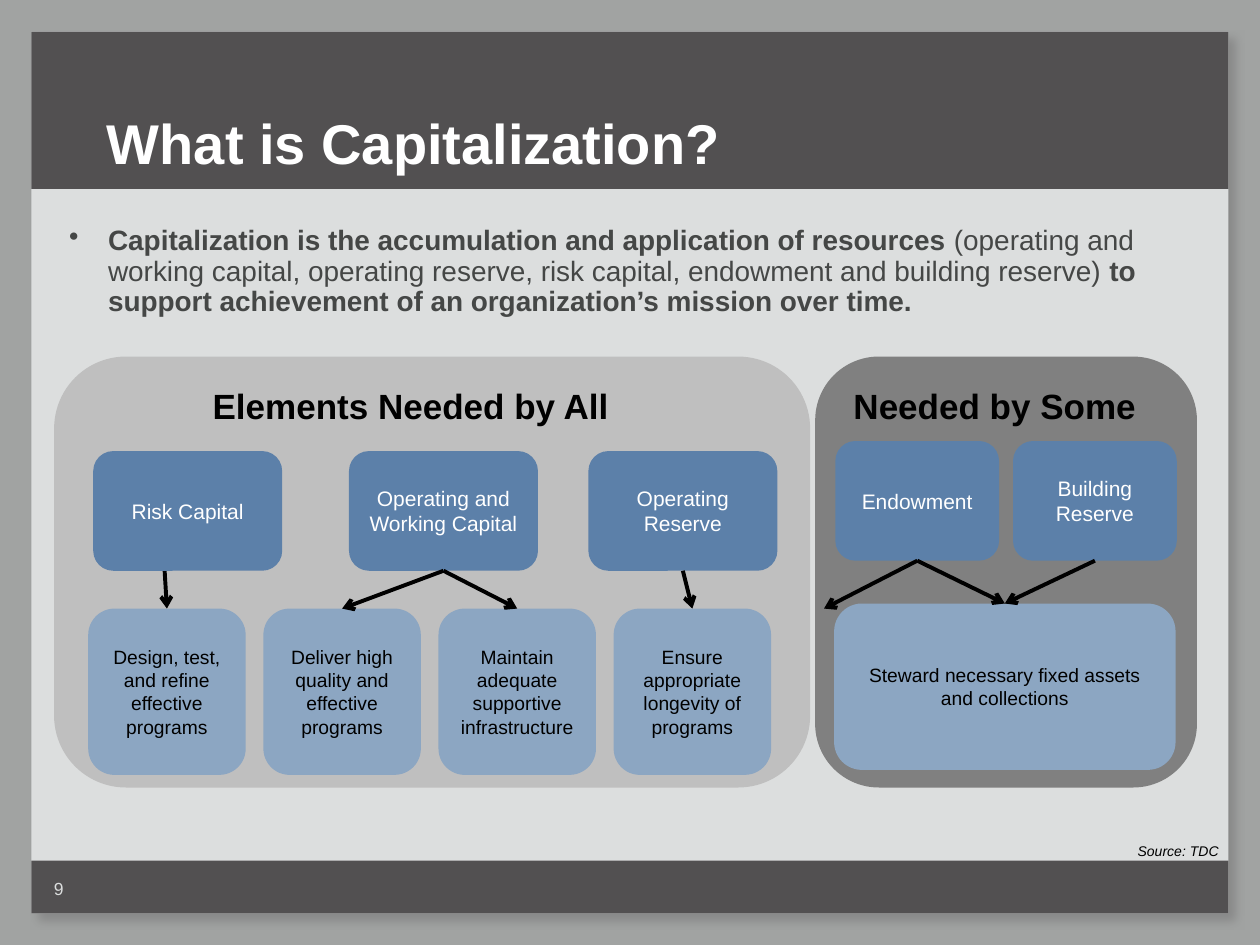
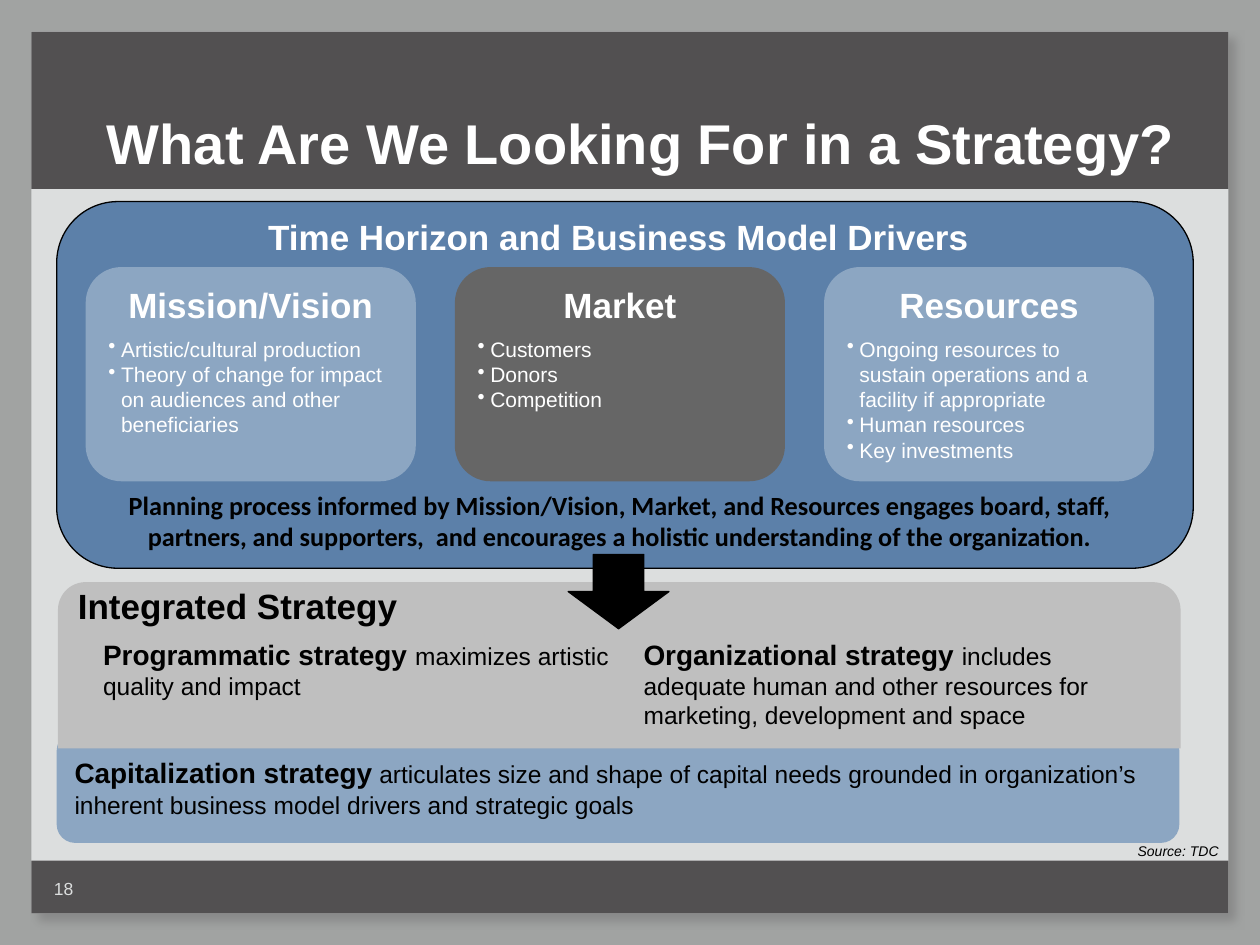
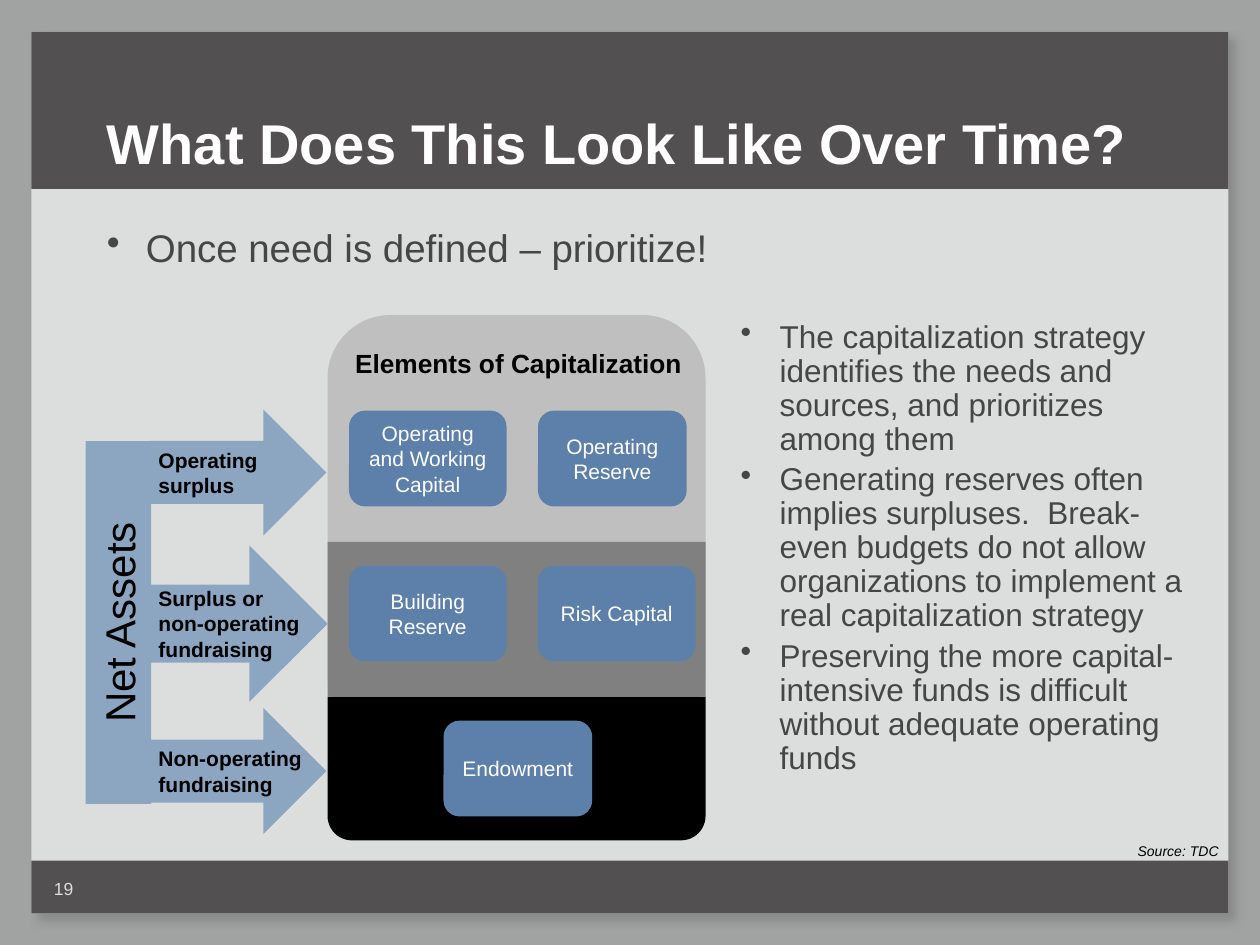
from lxml.etree import SubElement
from pptx import Presentation
from pptx.dml.color import RGBColor
from pptx.enum.shapes import MSO_CONNECTOR, MSO_SHAPE
from pptx.enum.text import MSO_ANCHOR, PP_ALIGN
from pptx.oxml.ns import qn
from pptx.util import Inches, Pt

BACKDROP = RGBColor(0xA1, 0xA3, 0xA2)
PAGE = RGBColor(0xDC, 0xDE, 0xDE)
BAND = RGBColor(0x52, 0x50, 0x51)
BODY = RGBColor(0x45, 0x47, 0x46)
DARK_BLUE = RGBColor(0x5C, 0x80, 0xA9)
LIGHT_BLUE = RGBColor(0x8C, 0xA6, 0xC2)
LIGHT_GRAY = RGBColor(0xBF, 0xBF, 0xBF)
MID_GRAY = RGBColor(0x80, 0x80, 0x80)
DARK_GRAY = RGBColor(0x66, 0x66, 0x66)
BLACK = RGBColor(0, 0, 0)
WHITE = RGBColor(0xFF, 0xFF, 0xFF)

BULLETS = {"color": BODY, "bullet_indent": 0.31, "line_spacing": 0.9}
BOLD = {"bold": True}
LEAD = {"bold": True, "size": 16}


def format_run(run, size, color, bold, italic, font):
    """Set the font of one run."""
    run.font.size = Pt(size)
    run.font.color.rgb = color
    run.font.bold = bold
    run.font.italic = italic
    run.font.name = font


def add_bullet(paragraph, indent):
    """Give a paragraph a hanging bullet."""
    properties = paragraph._p.get_or_add_pPr()
    properties.set("marL", str(Inches(indent)))
    properties.set("indent", str(-Inches(indent)))
    SubElement(properties, qn("a:buChar"), char="•")


def write(shape, *paragraphs, size=12, color=BLACK, bold=False, italic=False,
          font="Arial", align=PP_ALIGN.LEFT, anchor=MSO_ANCHOR.TOP, wrap=True,
          bullet_indent=None, line_spacing=None, before=0, after=0):
    """Append paragraphs, each a string or a list of (text, overrides) runs."""
    frame = shape.text_frame
    frame.word_wrap = wrap
    frame.vertical_anchor = anchor
    for content in paragraphs:
        first = not frame.paragraphs[0].runs
        paragraph = frame.paragraphs[0] if first else frame.add_paragraph()
        paragraph.alignment = align
        paragraph.space_before = Pt(0 if first else before)
        paragraph.space_after = Pt(after)
        if line_spacing:
            paragraph.line_spacing = line_spacing
        if bullet_indent:
            add_bullet(paragraph, bullet_indent)
        runs = [(content, {})] if isinstance(content, str) else content
        for text, overrides in runs:
            run = paragraph.add_run()
            run.text = text
            style = {"size": size, "color": color, "bold": bold,
                     "italic": italic, "font": font}
            format_run(run, **{**style, **overrides})


def add_text(slide, box, *paragraphs, **style):
    """Add a text box; box is left, top, width and height in inches."""
    shape = slide.shapes.add_textbox(*map(Inches, box))
    write(shape, *paragraphs, **style)
    return shape


def add_panel(slide, box, fill, kind=MSO_SHAPE.ROUNDED_RECTANGLE, outline=None, rotation=0):
    """Add a filled shape, outlined only when a colour is given."""
    shape = slide.shapes.add_shape(kind, *map(Inches, box))
    shape.shadow.inherit = False
    shape.fill.solid()
    shape.fill.fore_color.rgb = fill
    shape.rotation = rotation
    if outline is None:
        shape.line.fill.background()
    else:
        shape.line.color.rgb = outline
        shape.line.width = Pt(0.75)
    return shape


def add_label_box(slide, box, text, fill=DARK_BLUE, color=WHITE, size=12):
    """Add a rounded box with a centred label."""
    shape = add_panel(slide, box, fill)
    write(shape, text, size=size, color=color, align=PP_ALIGN.CENTER,
          anchor=MSO_ANCHOR.MIDDLE)
    return shape


def add_purpose_box(slide, box, text):
    """Add a pale box that states what capital is for."""
    return add_label_box(slide, box, text, LIGHT_BLUE, BLACK, 11)


def add_arrow(slide, start, end):
    """Draw an arrow; each end is a point, or a box joined at bottom or top."""
    start_point = start if isinstance(start, tuple) else (0, 0)
    end_point = end if isinstance(end, tuple) else (0, 0)
    connector = slide.shapes.add_connector(
        MSO_CONNECTOR.STRAIGHT, *map(Inches, start_point + end_point))
    if not isinstance(start, tuple):
        connector.begin_connect(start, 2)
    if not isinstance(end, tuple):
        connector.end_connect(end, 0)
    connector.line.color.rgb = BLACK
    connector.line.width = Pt(2.25)
    SubElement(connector.line._get_or_add_ln(), qn("a:tailEnd"), type="arrow")
    SubElement(connector._element.spPr, qn("a:effectLst"))


def add_drop_shadow(shape):
    """Give a shape a soft gray shadow to the lower right."""
    effects = shape._element.spPr.find(qn("a:effectLst"))
    shadow = SubElement(effects, qn("a:outerShdw"), blurRad=str(Pt(5)),
                        dist=str(Pt(6)), dir="2700000", algn="tl", rotWithShape="0")
    color = SubElement(shadow, qn("a:srgbClr"), val=str(MID_GRAY))
    SubElement(color, qn("a:alpha"), val="75000")


def add_base_slide(presentation, title, number):
    """Add a slide with the shared frame, title, number and source."""
    slide = presentation.slides.add_slide(presentation.slide_layouts[6])
    slide.background.fill.solid()
    slide.background.fill.fore_color.rgb = BACKDROP
    page = add_panel(slide, (0.25, 0.25, 9.5, 7), PAGE, MSO_SHAPE.RECTANGLE)
    add_drop_shadow(page)
    for top, height in ((6.83, 0.42), (0.25, 1.25)):
        add_panel(slide, (0.25, top, 9.5, height), BAND, MSO_SHAPE.RECTANGLE)
    add_text(slide, (0.75, 0.5, 8.92, 1.25), title, size=32, color=WHITE,
             bold=True, anchor=MSO_ANCHOR.MIDDLE)
    add_text(slide, (0.33, 6.92, 0.39, 0.3), str(number), size=10, color=PAGE)
    add_text(slide, (8.93, 6.64, 0.85, 0.24), "Source: TDC", size=8,
             italic=True, wrap=False)
    return slide


def build_definition(presentation):
    """Build the slide that defines capitalization."""
    slide = add_base_slide(presentation, "What is Capitalization?", 9)
    add_text(slide, (0.45, 1.75, 8.93, 0.9), [
        ("Capitalization is the accumulation and application of resources ", BOLD),
        ("(operating and working capital, operating reserve, risk capital, "
         "endowment and building reserve) ", {}),
        ("to support achievement of an organization’s mission over time.", BOLD),
    ], size=16, **BULLETS)

    heading = {"size": 20, "bold": True, "align": PP_ALIGN.CENTER}
    add_panel(slide, (0.43, 2.83, 6, 3.42), LIGHT_GRAY)
    add_text(slide, (0.62, 3, 5.28, 0.44), "Elements Needed by All", **heading)
    purposes = ("Design, test, and refine effective programs",
                "Deliver high quality and effective programs",
                "Maintain adequate supportive infrastructure",
                "Ensure appropriate longevity of programs")
    design, deliver, maintain, ensure = [
        add_purpose_box(slide, (0.7 + 1.39 * index, 4.83, 1.25, 1.32), text)
        for index, text in enumerate(purposes)]
    add_arrow(slide, (1.29, 4.25), design)
    elements = ((0.74, "Risk Capital"), (2.77, "Operating and Working Capital"),
                (4.67, "Operating Reserve"))
    _, working_capital, operating_reserve = [
        add_label_box(slide, (left, 3.58, 1.5, 0.95), text) for left, text in elements]

    add_panel(slide, (6.47, 2.83, 3.03, 3.42), MID_GRAY)
    add_text(slide, (6.29, 3, 3.21, 0.44), "Needed by Some", **heading)
    steward = add_purpose_box(slide, (6.62, 4.79, 2.71, 1.32),
                              "Steward necessary fixed assets and collections")
    endowment, building_reserve = [
        add_label_box(slide, (left, 3.5, 1.3, 0.95), text)
        for left, text in ((6.63, "Endowment"), (8.04, "Building Reserve"))]

    for start, end in ((working_capital, deliver), (working_capital, maintain),
                       (operating_reserve, ensure), (endowment, steward),
                       (endowment, (6.54, 4.83)), (building_reserve, steward)):
        add_arrow(slide, start, end)


def build_strategy(presentation):
    """Build the slide on what a strategy holds."""
    slide = add_base_slide(presentation, "What Are We Looking For in a Strategy?", 18)
    add_panel(slide, (0.45, 1.6, 9.02, 2.91), DARK_BLUE, outline=BLACK)
    add_text(slide, (2.03, 1.66, 6.37, 0.44), "Time Horizon and Business Model Drivers",
             size=20, color=WHITE, bold=True)
    drivers = (
        ("Mission/Vision", LIGHT_BLUE,
         ("Artistic/cultural production",
          "Theory of change for impact on audiences and other beneficiaries")),
        ("Market", DARK_GRAY, ("Customers", "Donors", "Competition")),
        ("Resources", LIGHT_BLUE,
         ("Ongoing resources to sustain operations and a facility if appropriate",
          "Human resources", "Key investments")),
    )
    for index, (name, fill, points) in enumerate(drivers):
        card = add_panel(slide, (0.68 + 2.93 * index, 2.12, 2.62, 1.7), fill)
        write(card, name, size=20, color=WHITE, bold=True, align=PP_ALIGN.CENTER, after=6)
        write(card, *points, color=WHITE, bullet_indent=0.1)
    add_text(slide, (0.72, 3.83, 8.4, 0.61),
             "Planning process informed by Mission/Vision, Market, and Resources engages "
             "board, staff, partners, and supporters,  and encourages a holistic "
             "understanding of the organization.",
             size=15, bold=True, font="Calibri", align=PP_ALIGN.CENTER)

    capitalization = add_panel(slide, (0.45, 5.81, 8.91, 0.88), LIGHT_BLUE)
    write(capitalization, [
        ("Capitalization strategy", LEAD),
        (" articulates size and shape of capital needs grounded in organization’s "
         "inherent business model drivers and strategic goals", {}),
    ], size=14, anchor=MSO_ANCHOR.MIDDLE)
    add_panel(slide, (0.46, 4.62, 8.91, 1.32), LIGHT_GRAY,
              MSO_SHAPE.ROUND_2_SAME_RECTANGLE)
    add_text(slide, (0.52, 4.59, 3.5, 0.44), "Integrated Strategy", size=20, bold=True)
    strategies = (
        (0.72, 4.23, "Programmatic strategy ", "maximizes artistic quality and impact"),
        (5.01, 4, "Organizational strategy ", "includes adequate human and other "
         "resources for marketing, development and space"),
    )
    for left, width, name, text in strategies:
        add_text(slide, (left, 5.01, width, 0.85), [(name, LEAD), (text, {})], size=14)
    add_panel(slide, (4.51, 4.4, 0.8, 0.59), BLACK, MSO_SHAPE.DOWN_ARROW, outline=BLACK)


def build_timeline(presentation):
    """Build the slide on funding the elements over time."""
    slide = add_base_slide(presentation, "What Does This Look Like Over Time?", 19)
    add_text(slide, (0.75, 1.77, 8.5, 0.5), "Once need is defined – prioritize!",
             size=22, **BULLETS)
    add_text(slide, (5.78, 2.5, 3.72, 3.9),
             "The capitalization strategy identifies the needs and sources, and "
             "prioritizes among them",
             "Generating reserves often implies surpluses.  Break-even budgets do not "
             "allow organizations to implement a real capitalization strategy",
             "Preserving the more capital-intensive funds is difficult without adequate "
             "operating funds",
             size=18, before=3.6, **BULLETS)

    add_panel(slide, (2.6, 2.5, 3, 3.35), LIGHT_GRAY)
    base = add_panel(slide, (2.6, 5.53, 3, 1.14), BLACK, MSO_SHAPE.ROUND_2_SAME_RECTANGLE)
    base.adjustments[0], base.adjustments[1] = 0, 0.17
    add_panel(slide, (2.6, 4.3, 3, 1.23), MID_GRAY, MSO_SHAPE.RECTANGLE)
    add_text(slide, (2.62, 2.71, 2.99, 0.35), "Elements of Capitalization", size=15,
             bold=True, align=PP_ALIGN.CENTER)
    elements = ((2.77, 3.26, 1.25, "Operating and Working Capital"),
                (4.27, 3.26, 1.18, "Operating Reserve"),
                (2.77, 4.49, 1.25, "Building Reserve"),
                (4.27, 4.49, 1.25, "Risk Capital"),
                (3.52, 5.72, 1.18, "Endowment"))
    for left, top, width, text in elements:
        add_label_box(slide, (left, top, width, 0.76), text)

    sources = (
        ((1.39, 3.05, 1, 1.4), (1.16, 3.5, 1.07, 0.51), "Operating surplus"),
        ((1.27, 4.24, 1.24, 1.42), (1.16, 4.6, 1.36, 0.71),
         "Surplus or non-operating fundraising"),
        ((1.38, 5.41, 1, 1.42), (1.16, 5.87, 1.36, 0.51), "Non-operating fundraising"),
    )
    for arrow_box, text_box, text in sources:
        add_panel(slide, arrow_box, LIGHT_BLUE, MSO_SHAPE.UP_ARROW, rotation=90)
        add_text(slide, text_box, text, bold=True)
    net_assets = add_panel(slide, (-0.5, 4.68, 2.88, 0.52), LIGHT_BLUE,
                           MSO_SHAPE.RECTANGLE, rotation=270)
    write(net_assets, "Net Assets", size=24, align=PP_ALIGN.CENTER,
          anchor=MSO_ANCHOR.MIDDLE)


def main():
    """Build and save the presentation."""
    presentation = Presentation()
    presentation.slide_width = Inches(10)
    presentation.slide_height = Inches(7.5)
    build_definition(presentation)
    build_strategy(presentation)
    build_timeline(presentation)
    presentation.save("out.pptx")


if __name__ == "__main__":
    main()
